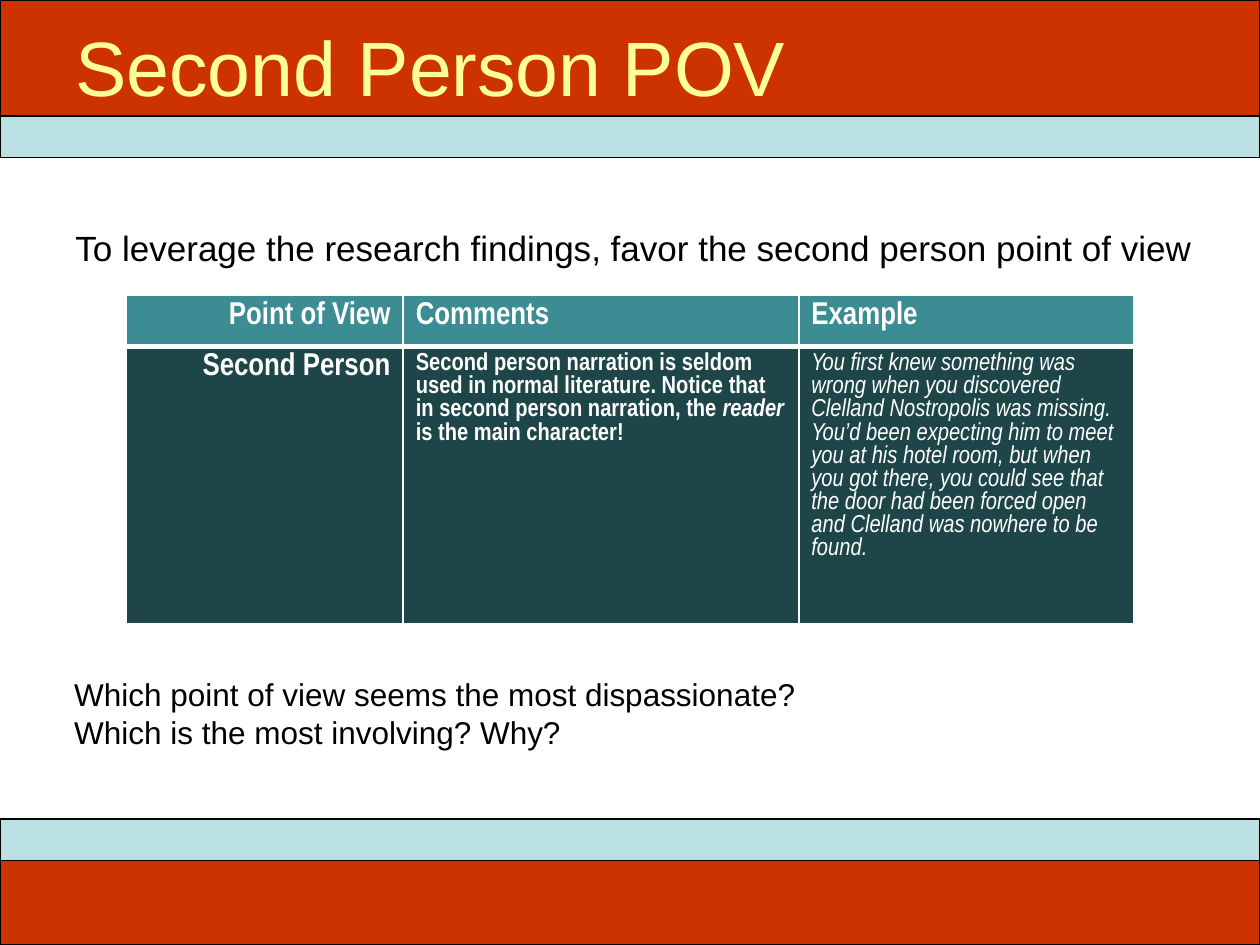
from lxml.etree import SubElement
from pptx import Presentation
from pptx.dml.color import RGBColor
from pptx.enum.shapes import MSO_SHAPE
from pptx.enum.text import MSO_ANCHOR, PP_ALIGN
from pptx.oxml.ns import qn
from pptx.util import Inches, Pt

RED, PALE_BLUE, YELLOW = "CC3300", "BBE0E3", "FFFF99"
TEAL, DARK_TEAL = "3C8C93", "1E4649"
BLACK, WHITE = "000000", "FFFFFF"


def color(hex_string):
    """Turn a hex string into a colour."""
    return RGBColor.from_string(hex_string)


def add_band(slide, top, height, fill):
    """Draw an outlined band across the whole slide."""
    band = slide.shapes.add_shape(
        MSO_SHAPE.RECTANGLE, 0, Inches(top), Inches(10), Inches(height)
    )
    band.shadow.inherit = False
    band.fill.solid()
    band.fill.fore_color.rgb = color(fill)
    band.line.color.rgb = color(BLACK)
    band.line.width = Pt(0.75)


def add_run(paragraph, text, size, ink, font="Arial", bold=False, italic=False):
    """Append one formatted run to a paragraph."""
    run = paragraph.add_run()
    run.text = text
    run.font.name = font
    run.font.size = Pt(size)
    run.font.bold = bold
    run.font.italic = italic
    run.font.color.rgb = color(ink)


def add_text(slide, left, top, width, height, lines, size, ink=BLACK,
             anchor=MSO_ANCHOR.TOP, space_before=0):
    """Add a wrapped text box with one paragraph per line."""
    box = slide.shapes.add_textbox(
        Inches(left), Inches(top), Inches(width), Inches(height)
    )
    frame = box.text_frame
    frame.word_wrap = True
    frame.vertical_anchor = anchor
    for index, line in enumerate(lines):
        paragraph = frame.add_paragraph() if index else frame.paragraphs[0]
        paragraph.space_before = Pt(space_before)
        add_run(paragraph, line, size, ink)


def set_borders(cell, bottom_width):
    """Give a cell white borders, placed ahead of its fill."""
    properties = cell._tc.get_or_add_tcPr()
    for side, width in (("L", 1), ("R", 1), ("T", 1), ("B", bottom_width)):
        line = SubElement(properties, qn(f"a:ln{side}"), w=str(Pt(width)))
        fill = SubElement(line, qn("a:solidFill"))
        SubElement(fill, qn("a:srgbClr"), val=WHITE)


def fill_cell(cell, runs, size, fill, bottom_width, align):
    """Format a cell and write its (text, bold, italic) runs."""
    set_borders(cell, bottom_width)
    cell.fill.solid()
    cell.fill.fore_color.rgb = color(fill)
    paragraph = cell.text_frame.paragraphs[0]
    paragraph.alignment = align
    for text, bold, italic in runs:
        add_run(paragraph, text, size, WHITE, "Arial Narrow", bold, italic)


def add_view_table(slide):
    """Add the table that describes the point of view."""
    header = [[(text, True, False)] for text in ("Point of View", "Comments", "Example")]
    body = [
        [("Second Person", True, False)],
        [
            ("Second person narration is seldom used in normal literature. "
             "Notice that in second person narration, the ", True, False),
            ("reader", True, True),
            (" is the main character!", True, False),
        ],
        [("You first knew something was wrong when you discovered Clelland "
          "Nostropolis was missing. You’d been expecting him to meet you at his "
          "hotel room, but when you got there, you could see that the door had "
          "been forced open and Clelland was nowhere to be found.", False, True)],
    ]
    table = slide.shapes.add_table(
        2, 3, Inches(1), Inches(2.34), Inches(8), Inches(2.61)
    ).table
    for column, width in zip(table.columns, (2.2, 3.14, 2.66)):
        column.width = Inches(width)
    rows = ((0.41, header, TEAL, 3, 18), (2.2, body, DARK_TEAL, 1, 14))
    for row, (height, contents, fill, bottom_width, size) in zip(table.rows, rows):
        row.height = Inches(height)
        for index, (cell, runs) in enumerate(zip(row.cells, contents)):
            align = PP_ALIGN.LEFT if index else PP_ALIGN.RIGHT
            fill_cell(cell, runs, size if index else 18, fill, bottom_width, align)


def main():
    """Build and save the slide."""
    presentation = Presentation()
    presentation.slide_width, presentation.slide_height = Inches(10), Inches(7.5)
    slide = presentation.slides.add_slide(presentation.slide_layouts[6])
    for top, height, fill in (
        (0.92, 0.33, PALE_BLUE), (0, 0.92, RED),
        (6.5, 0.33, PALE_BLUE), (6.83, 0.67, RED),
    ):
        add_band(slide, top, height, fill)
    add_text(slide, 0.5, 0.17, 9, 0.7, ["Second Person POV"], 44, YELLOW,
             MSO_ANCHOR.MIDDLE)
    add_text(slide, 0.5, 1.75, 9.15, 0.57,
             ["To leverage the research findings, favor the second person point of view"],
             20, space_before=4)
    add_view_table(slide)
    add_text(slide, 0.49, 5.31, 8.73, 1.01,
             ["Which point of view seems the most dispassionate?",
              "Which is the most involving? Why?"], 18)
    presentation.save("out.pptx")


if __name__ == "__main__":
    main()
